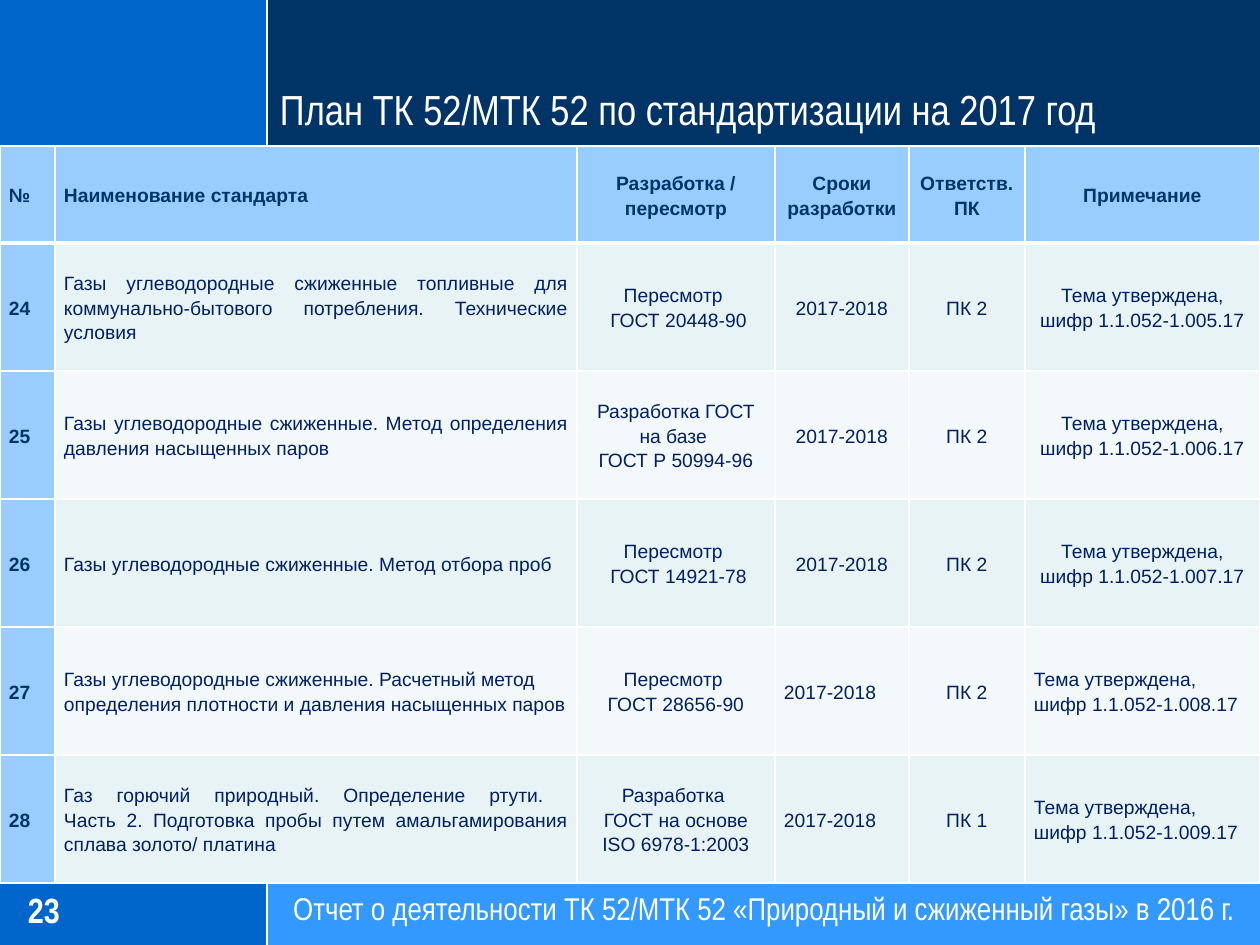
from lxml import etree
from pptx import Presentation
from pptx.dml.color import RGBColor
from pptx.enum.shapes import MSO_CONNECTOR, MSO_SHAPE
from pptx.enum.text import MSO_ANCHOR, PP_ALIGN
from pptx.oxml.ns import qn
from pptx.util import Emu, Pt

LEFT, CENTER, JUSTIFY = PP_ALIGN.LEFT, PP_ALIGN.CENTER, PP_ALIGN.JUSTIFY
MIDDLE, BOTTOM = MSO_ANCHOR.MIDDLE, MSO_ANCHOR.BOTTOM
RECTANGLE, STRAIGHT = MSO_SHAPE.RECTANGLE, MSO_CONNECTOR.STRAIGHT

WIDTH, HEIGHT = 1260, 945
SIDE, HEADER_BOTTOM, FOOTER_TOP = 267, 148, 871
TABLE_TOP, HEAD_ROW, BODY_ROW = 146, 97, 128
COLUMNS = [55, 522, 198, 134, 116, 235]

WHITE, NAVY, BLUE, SKY = "FFFFFF", "003366", "0066CC", "3399FF"
PALE_BLUE, BODY_TEXT = "99CCFF", "002060"
BANDS = ["E7F3F4", "F3F9FA"]

HEADINGS = ["№", "Наименование стандарта", "Разработка / пересмотр",
            "Сроки разработки", "Ответств. ПК", "Примечание"]
HEADING_ALIGNS = [LEFT, LEFT, CENTER, CENTER, CENTER, CENTER]

# Name, its alignment, kind of work, committee, alignment of dates and note
# ("\n" starts a paragraph, "\v" breaks a line)
STANDARDS = [
    ("Газы углеводородные сжиженные топливные для коммунально-бытового "
     "потребления. Технические условия", JUSTIFY,
     "Пересмотр \n ГОСТ 20448-90", "ПК 2", CENTER),
    ("Газы углеводородные сжиженные. Метод определения давления насыщенных паров",
     JUSTIFY, "Разработка ГОСТ на базе \vГОСТ Р 50994-96", "ПК 2", CENTER),
    ("Газы углеводородные сжиженные. Метод отбора проб", JUSTIFY,
     "Пересмотр \n ГОСТ 14921-78", "ПК 2", CENTER),
    ("Газы углеводородные сжиженные. Расчетный метод определения плотности "
     "и давления насыщенных паров", LEFT,
     "Пересмотр \vГОСТ 28656-90", "ПК 2", LEFT),
    ("Газ горючий природный. Определение ртути. \vЧасть 2. Подготовка пробы "
     "путем амальгамирования сплава золото/ платина", JUSTIFY,
     "Разработка \nГОСТ на основе ISO 6978-1:2003", "ПК 1", LEFT),
]
FIRST_NUMBER, FIRST_CODE = 24, 5


def px(length):
    return Emu(round(length * 914400 / 126))


def color(value):
    return RGBColor.from_string(value)


class Deck:
    """Holds the style and the current slide."""

    def __init__(self):
        self.presentation = Presentation()
        self.presentation.slide_width = px(WIDTH)
        self.presentation.slide_height = px(HEIGHT)
        self.slide = self.presentation.slides.add_slide(
            self.presentation.slide_layouts[6])

    def band(self, x, y, w, h, fill):
        band = self.slide.shapes.add_shape(RECTANGLE, px(x), px(y), px(w), px(h))
        band.shadow.inherit = False
        band.fill.solid()
        band.fill.fore_color.rgb = color(fill)
        band.line.fill.background()

    def rule(self, x1, y1, x2, y2):
        rule = self.slide.shapes.add_connector(
            STRAIGHT, px(x1), px(y1), px(x2), px(y2))
        rule.line.color.rgb = color(WHITE)
        rule.line.width = Pt(1.25)
        etree.SubElement(rule._element.spPr, qn("a:effectLst"))

    def fill_text(self, frame, text, size, font, ink, bold=False, align=LEFT,
                  spacing=None):
        frame.text = text
        frame.word_wrap = True
        for paragraph in frame.paragraphs:
            paragraph.alignment = align
            if spacing:
                paragraph.line_spacing = spacing
            for run in paragraph.runs:
                run.font.size = Pt(size)
                run.font.name = font
                run.font.bold = bold
                run.font.color.rgb = color(ink)

    def label(self, x, y, w, h, text, size, anchor=MIDDLE, bold=False, align=LEFT):
        frame = self.slide.shapes.add_textbox(px(x), px(y), px(w), px(h)).text_frame
        frame.margin_left = frame.margin_right = 0
        frame.margin_top = frame.margin_bottom = 0
        frame.vertical_anchor = anchor
        self.fill_text(frame, text, size, "Arial Narrow", WHITE, bold, align)

    def border(self, cell, side, width):
        line = etree.SubElement(cell._tc.get_or_add_tcPr(), qn(f"a:ln{side}"),
                                w=str(Pt(width)))
        fill = etree.SubElement(line, qn("a:solidFill"))
        etree.SubElement(fill, qn("a:srgbClr"), val=WHITE)

    def cell(self, cell, text, fill, ink, bold, align, top=1, bottom=1):
        cell.margin_left = cell.margin_right = px(9)
        cell.margin_top = cell.margin_bottom = 0
        cell.vertical_anchor = MIDDLE
        for side, width in zip("LRTB", (1, 1, top, bottom)):
            self.border(cell, side, width)
        cell.fill.solid()
        cell.fill.fore_color.rgb = color(fill)
        self.fill_text(cell.text_frame, text, 11, "Arial", ink, bold, align, 1.15)

    def table(self, x, y, columns, rows):
        table = self.slide.shapes.add_table(
            len(rows), len(columns), px(x), px(y), px(sum(columns)), px(sum(rows))).table
        table.first_row = table.horz_banding = False
        for column, width in zip(table.columns, columns):
            column.width = px(width)
        for row, height in zip(table.rows, rows):
            row.height = px(height)
        return table


def main():
    deck = Deck()

    # Footer and header bands with their dividing lines
    for top, height, right_fill in ((FOOTER_TOP, HEIGHT - FOOTER_TOP, SKY),
                                    (0, HEADER_BOTTOM, NAVY)):
        deck.band(0, top, SIDE, height, BLUE)
        deck.band(SIDE, top, WIDTH - SIDE, height, right_fill)
        deck.rule(SIDE, top, SIDE, top + height)
    for y in (FOOTER_TOP, HEADER_BOTTOM):
        deck.rule(0, y, WIDTH, y)

    # Title, page number and footer text
    deck.label(280, 71, 979, 63, "План ТК 52/МТК 52 по стандартизации на 2017 год",
               24, anchor=BOTTOM)
    deck.label(28, 877, 205, 66, "23", 20, bold=True)
    deck.label(SIDE + 1, FOOTER_TOP, WIDTH - SIDE - 1, HEIGHT - FOOTER_TOP,
               "Отчет о деятельности ТК 52/МТК 52 «Природный и сжиженный газы» в 2016 г.",
               18, align=CENTER)

    # Plan table: heading row
    plan = deck.table(0, TABLE_TOP, COLUMNS, [HEAD_ROW] + [BODY_ROW] * len(STANDARDS))
    for column, (heading, align) in enumerate(zip(HEADINGS, HEADING_ALIGNS)):
        deck.cell(plan.cell(0, column), heading, PALE_BLUE, NAVY, True, align, bottom=3)

    # Plan table: one row per standard
    for index, (name, name_align, work, committee, align) in enumerate(STANDARDS):
        row = index + 1
        top = 3 if index == 0 else 1
        note = f"Тема утверждена, шифр 1.1.052-1.{FIRST_CODE + index:03}.17"
        deck.cell(plan.cell(row, 0), str(FIRST_NUMBER + index), PALE_BLUE, NAVY,
                  True, LEFT, top)
        details = [(name, name_align), (work, CENTER), ("2017-2018", align),
                   (committee, CENTER), (note, align)]
        for column, (text, text_align) in enumerate(details, start=1):
            deck.cell(plan.cell(row, column), text, BANDS[index % 2], BODY_TEXT,
                      False, text_align, top)

    deck.presentation.save("out.pptx")


if __name__ == "__main__":
    main()
